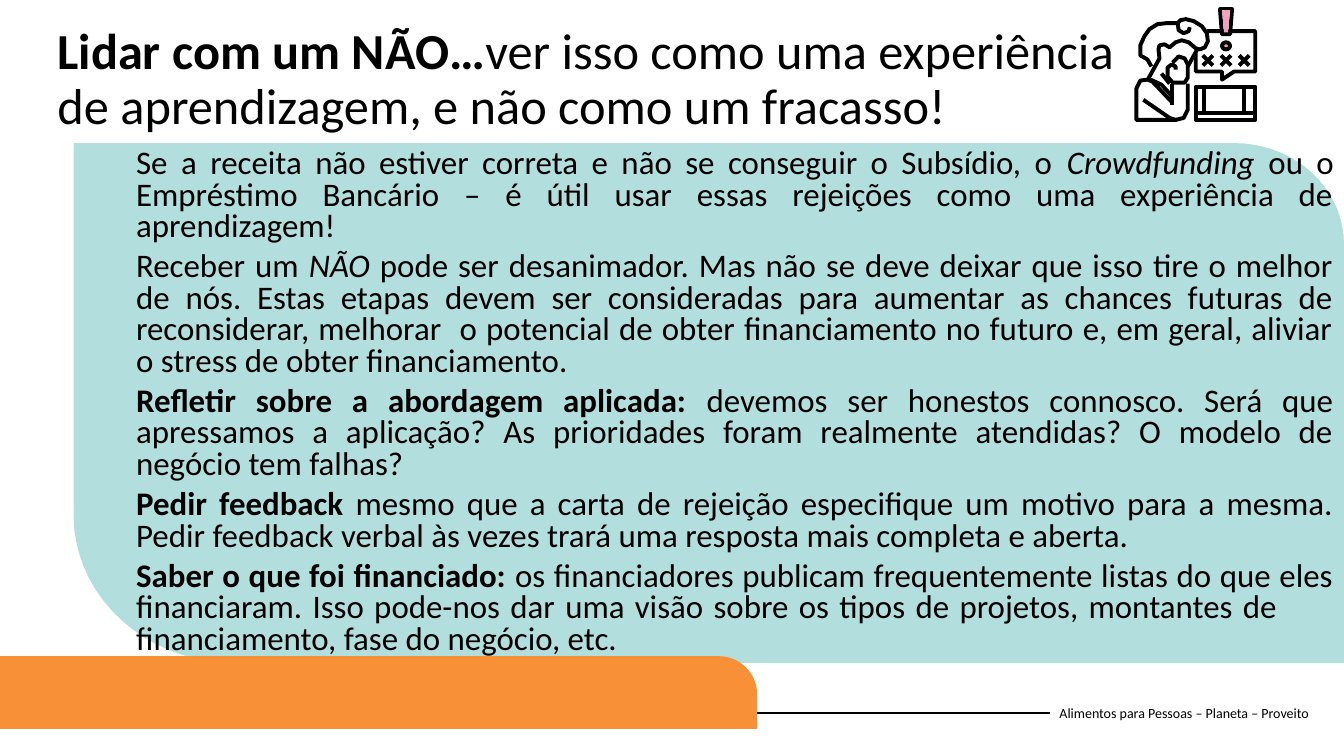
from math import cos, radians, sin

from lxml.etree import SubElement
from pptx import Presentation
from pptx.dml.color import RGBColor
from pptx.enum.shapes import MSO_CONNECTOR, MSO_SHAPE
from pptx.enum.text import MSO_ANCHOR, MSO_AUTO_SIZE, PP_ALIGN
from pptx.oxml.ns import qn
from pptx.util import Inches, Pt

COLORS = {"black": "000000", "teal": "B2DEDD", "orange": "F79037", "pink": "F1A0C2"}

TITLE = [[("Lidar com um NÃO…", "b"),
          ("ver isso como uma experiência de aprendizagem, e não como um fracasso!", "")]]

BODY = [
    [("Se a receita não estiver correta e não se conseguir o Subsídio, o ", ""),
     ("Crowdfunding ", "i"),
     ("ou o Empréstimo Bancário – é útil usar essas rejeições como uma experiência de "
      "aprendizagem!", "")],
    [("Receber um ", ""),
     ("NÃO ", "i"),
     ("pode ser desanimador. Mas não se deve deixar que isso tire o melhor de nós. Estas etapas "
      "devem ser consideradas para aumentar as chances futuras de reconsiderar, melhorar  o "
      "potencial de obter financiamento no futuro e, em geral, aliviar o stress de obter "
      "financiamento.", "")],
    [("Refletir sobre a abordagem aplicada: ", "b"),
     ("devemos ser honestos connosco. Será que apressamos a aplicação? As prioridades foram "
      "realmente atendidas? O modelo de negócio tem falhas?", "")],
    [("Pedir feedback ", "b"),
     ("mesmo que a carta de rejeição especifique um motivo para a mesma. Pedir feedback verbal "
      "às vezes trará uma resposta mais completa e aberta.", "")],
    [("Saber o que foi financiado: ", "b"),
     ("os financiadores publicam frequentemente listas do que eles financiaram. Isso pode-nos "
      "dar uma visão sobre os tipos de projetos, montantes de \tfinanciamento, fase do negócio, "
      "etc.", "")],
]

FOOTER = [[("Alimentos para Pessoas – Planeta – Proveito", "")]]

BUBBLE = [(11.97, .31), (12.45, .31), (12.45, .71), (12.24, .71), (12.12, .79), (12.12, .71),
          (11.86, .71), (11.86, .53)]
HAIR = [(11.42, .66), (11.38, .59), (11.31, .55), (11.31, .45), (11.35, .36), (11.4, .29),
        (11.48, .24), (11.57, .23), (11.68, .23), (11.71, .2), (11.76, .19), (11.84, .21),
        (11.92, .26), (11.97, .33), (11.98, .41), (11.95, .47), (11.9, .49), (11.86, .48),
        (11.79, .42), (11.72, .4), (11.66, .42), (11.6, .47), (11.55, .44), (11.5, .45),
        (11.49, .49), (11.5, .58), (11.39, .78)]
CURL = [(11.68, .23), (11.69, .3), (11.74, .33), (11.79, .31), (11.8, .27)]
FACE = [(11.87, .5), (11.78, .66)]
HAND = [(11.66, .69), (11.66, .66), (11.62, .64), (11.58, .67), (11.58, .76), (11.63, .82),
        (11.75, .82), (11.78, .77), (11.78, .64), (11.75, .58), (11.69, .56), (11.63, .62)]
THUMB = [(11.52, .73), (11.6, .83)]
CHEST = [(11.62, 1.04), (11.62, .83)]
WRIST = [(11.41, .79), (11.52, .84), (11.62, .95)]
SLEEVE = [(11.67, 1.19), (11.27, 1.19), (11.27, .88), (11.31, .8), (11.38, .79), (11.43, .81),
          (11.62, 1.01)]
FOREARM = [(11.78, .83), (11.78, 1.09), (11.74, 1.17), (11.66, 1.19), (11.6, 1.17), (11.34, .99)]
MARK_EDGE = [(12.1, .09), (12.22, .09), (12.2, .34), (12.12, .34), (12.1, .09)]
FIGURE = [BUBBLE, HAIR, CURL, FACE, HAND, THUMB, CHEST, WRIST, SLEEVE, FOREARM, MARK_EDGE]
MARK = [(12.12, .1), (12.2, .1), (12.18, .32), (12.14, .32)]
TABLET = [[(11.86, .86), (12.45, .86), (12.45, 1.19), (11.86, 1.19), (11.86, .86)],
          [(11.94, .86), (11.94, 1.12)], [(12.34, .86), (12.34, 1.12)],
          [(11.86, 1.12), (12.45, 1.12)]]


def rgb(name):
    return RGBColor.from_string(COLORS[name])


def arc(cx, cy, rx, ry, start, steps=18):
    angles = [radians(start + 90 * i / steps) for i in range(steps + 1)]
    return [(cx + rx * cos(a), cy + ry * sin(a)) for a in angles]


def paint(sp, fill=None, line=None, width=2.8):
    sp.shadow.inherit = False
    if fill:
        sp.fill.solid()
        sp.fill.fore_color.rgb = rgb(fill)
    else:
        sp.fill.background()
    if line:
        sp.line.color.rgb = rgb(line)
        sp.line.width = Pt(width)
    else:
        sp.line.fill.background()
    return sp


def add_outline(shapes, contours, close=False, **style):
    contours = [[(Inches(x), Inches(y)) for x, y in points] for points in contours]
    builder = shapes.build_freeform(*contours[0][0])
    for i, points in enumerate(contours):
        if i:
            builder.move_to(*points[0])
        builder.add_line_segments(points[1:], close=close)
    return paint(builder.convert_to_shape(), **style)


def place(sp, x, y, w, h):
    sp.left, sp.top, sp.width, sp.height = Inches(x), Inches(y), Inches(w), Inches(h)
    tree = sp.element.getparent()
    tree.append(sp.element)


def write(sp, paragraphs, size, align=PP_ALIGN.LEFT, spacing=1.0, before=0,
          anchor=MSO_ANCHOR.TOP, tab=None):
    tf = sp.text_frame
    tf.word_wrap = True
    tf.auto_size = MSO_AUTO_SIZE.NONE
    tf.vertical_anchor = anchor
    for i, runs in enumerate(paragraphs):
        p = tf.add_paragraph() if i else tf.paragraphs[0]
        p.alignment = align
        p.line_spacing = spacing
        p.space_before = Pt(before if i else 0)
        pPr = p._p.get_or_add_pPr()
        pPr.set("marL", "0")
        pPr.set("indent", "0")
        SubElement(pPr, qn("a:buNone"))
        if tab:
            stops = SubElement(pPr, qn("a:tabLst"))
            SubElement(stops, qn("a:tab"), pos=str(Inches(tab)), algn="l")
        for text, style in runs:
            r = p.add_run()
            r.text = text
            r.font.name = "Calibri"
            r.font.size = Pt(size)
            r.font.bold = style == "b"
            r.font.italic = style == "i"
            r.font.color.rgb = rgb("black")


def add_footer(s):
    sp = s.shapes.add_textbox(Inches(10.41), Inches(6.87), Inches(2.73), Inches(0.4))
    write(sp, FOOTER, 10, anchor=MSO_ANCHOR.MIDDLE)
    rule = s.shapes.add_connector(MSO_CONNECTOR.STRAIGHT, 0, Inches(7.07), Inches(10.41), Inches(7.07))
    rule.end_connect(sp, 1)
    rule.line.color.rgb = rgb("black")
    rule.line.width = Pt(1.5)
    SubElement(rule.element.spPr, qn("a:effectLst"))


def add_bands(s):
    panel = [(0.73, 1.42), *arc(12.24, 2.42, 1.09, 1, -90), (13.33, 6.58),
             *arc(2.34, 5.11, 1.61, 1.47, 90)]
    add_outline(s.shapes, [panel], close=True, fill="teal")
    tab = [(0, 7.23), (0, 6.51), *arc(7.13, 6.89, 0.38, 0.38, -90), (7.51, 7.23)]
    add_outline(s.shapes, [tab], close=True, fill="orange")


def add_icon(s):
    shapes = s.shapes.add_group_shape().shapes
    add_outline(shapes, FIGURE, line="black")
    add_outline(shapes, TABLET, line="black")
    for x in (11.98, 12.16, 12.34):
        cross = [[(x - 0.05, 0.6 - rise), (x + 0.05, 0.6 + rise)] for rise in (-0.05, 0.05)]
        add_outline(shapes, cross, line="black")
    add_outline(shapes, [MARK], close=True, fill="pink")
    dot = shapes.add_shape(MSO_SHAPE.OVAL, Inches(12.12), Inches(0.42), Inches(0.08), Inches(0.07))
    paint(dot, fill="pink", line="black")


def main():
    prs = Presentation()
    prs.slide_width, prs.slide_height = Inches(13.33), Inches(7.5)
    s = prs.slides.add_slide(prs.slide_layouts[1])
    add_footer(s)
    add_bands(s)
    title, body = s.placeholders
    place(body, 1.25, 1.43, 12.08, 6.07)
    write(body, BODY, 23.5, align=PP_ALIGN.JUSTIFY, spacing=0.8, before=6, tab=11.87)
    place(title, 0.47, 0.21, 10.77, 0.88)
    write(title, TITLE, 36, spacing=0.9)
    add_icon(s)
    prs.save("out.pptx")


if __name__ == "__main__":
    main()
